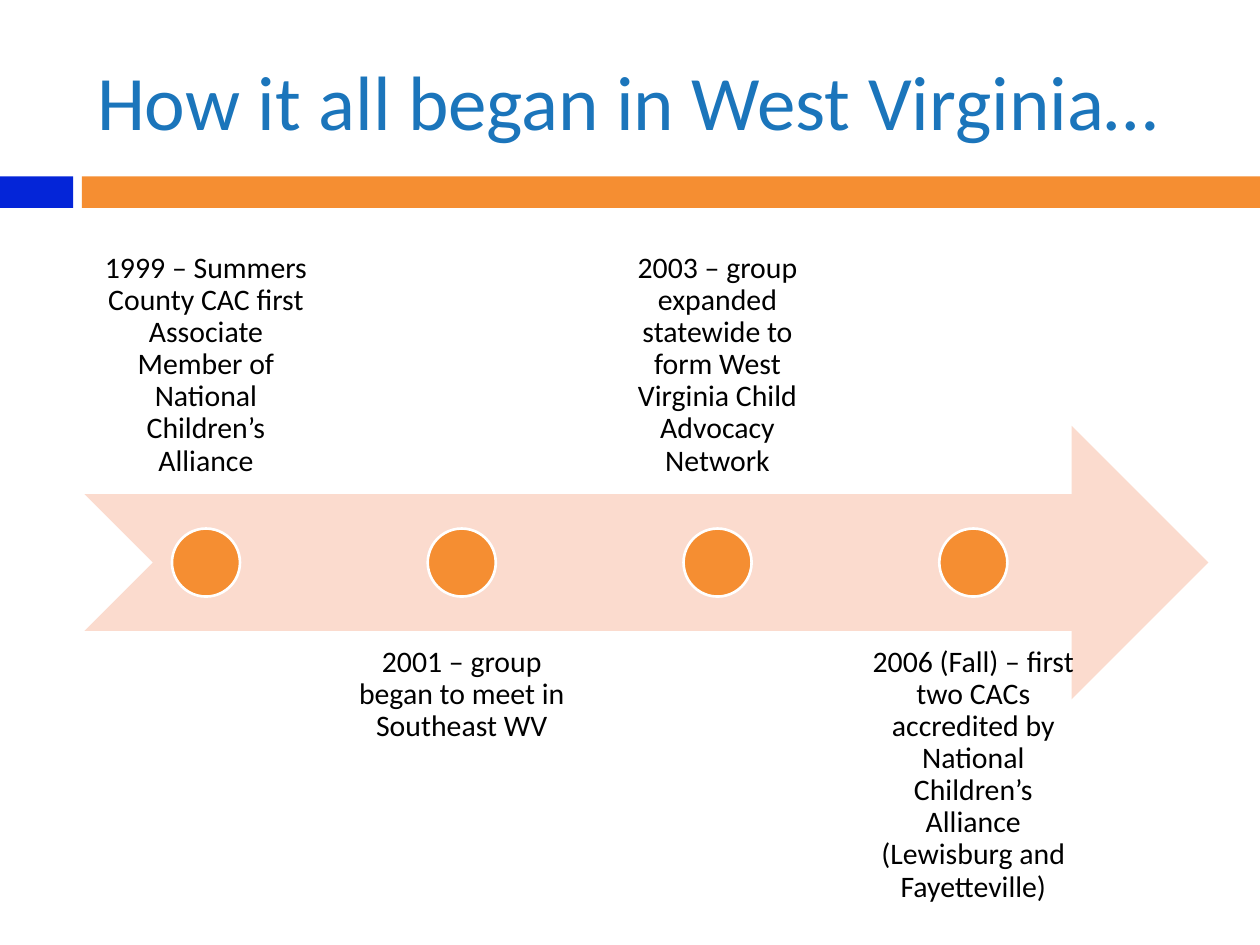
from pptx import Presentation
from pptx.dml.color import RGBColor
from pptx.enum.shapes import MSO_SHAPE
from pptx.enum.text import MSO_ANCHOR, PP_ALIGN
from pptx.util import Inches, Pt

TITLE = "How it all began in West Virginia…"
MILESTONES = [
    "1999 – Summers County CAC first Associate Member of National Children’s Alliance",
    "2001 – group began to meet in Southeast WV",
    "2003 – group expanded statewide to form West Virginia Child Advocacy Network",
    "2006 (Fall) – first two CACs accredited by National Children’s Alliance "
    "(Lewisburg and Fayetteville)",
]
COLORS = {
    "title": "1B75BB",
    "blue": "0425D8",
    "orange": "F58E32",
    "arrow": "FBDBCE",
    "text": "000000",
    "white": "FFFFFF",
}
FONT = "Calibri"
LEFT, WIDTH = 0.67, 8.92
LABEL_WIDTH, BAND_HEIGHT, STEP = 1.93, 2.17, 2.03
ARROW_TOP, LABEL_TOP, LABEL_BOTTOM = 3.38, 1.75, 5
DOT_SIZE = 0.54
INSET = 0.13


def color(name):
    return RGBColor.from_string(COLORS[name])


def add_filled(slide, kind, box, fill, outline=None):
    shape = slide.shapes.add_shape(kind, *map(Inches, box))
    shape.shadow.inherit = False
    shape.fill.solid()
    shape.fill.fore_color.rgb = color(fill)
    if outline:
        shape.line.color.rgb = color(outline)
        shape.line.width = Pt(1.5)
    else:
        shape.line.fill.background()


def write(paragraph, text, size, ink, alignment):
    paragraph.alignment = alignment
    run = paragraph.add_run()
    run.text = text
    run.font.name = FONT
    run.font.size = Pt(size)
    run.font.color.rgb = color(ink)


def add_title(slide):
    title = slide.shapes.title
    title.left, title.top = Inches(LEFT), Inches(0.25)
    title.width, title.height = Inches(WIDTH), Inches(1.08)
    title.text_frame.vertical_anchor = MSO_ANCHOR.MIDDLE
    write(title.text_frame.paragraphs[0], TITLE, 44, "title", PP_ALIGN.LEFT)


def add_milestone(slide, index, text):
    above = index % 2 == 0
    left = LEFT + index * STEP
    top = LABEL_TOP if above else LABEL_BOTTOM
    label = slide.shapes.add_textbox(
        Inches(left), Inches(top), Inches(LABEL_WIDTH), Inches(BAND_HEIGHT)
    )
    frame = label.text_frame
    frame.word_wrap = True
    frame.vertical_anchor = MSO_ANCHOR.BOTTOM if above else MSO_ANCHOR.TOP
    frame.margin_left = frame.margin_right = Inches(INSET)
    frame.margin_top = frame.margin_bottom = Inches(INSET)
    paragraph = frame.paragraphs[0]
    paragraph.line_spacing = 0.9
    write(paragraph, text, 17, "text", PP_ALIGN.CENTER)

    dot_left = left + (LABEL_WIDTH - DOT_SIZE) / 2
    dot_top = ARROW_TOP + (BAND_HEIGHT - DOT_SIZE) / 2
    dot_box = (dot_left, dot_top, DOT_SIZE, DOT_SIZE)
    add_filled(slide, MSO_SHAPE.OVAL, dot_box, "orange", "white")


def main():
    presentation = Presentation()
    presentation.slide_width, presentation.slide_height = Inches(10), Inches(7.5)
    slide = presentation.slides.add_slide(presentation.slide_layouts[5])
    add_filled(slide, MSO_SHAPE.RECTANGLE, (0, 1.4, 0.58, 0.25), "blue")
    add_filled(slide, MSO_SHAPE.RECTANGLE, (0.65, 1.4, 9.35, 0.25), "orange")
    add_title(slide)
    arrow_box = (LEFT, ARROW_TOP, WIDTH, BAND_HEIGHT)
    add_filled(slide, MSO_SHAPE.NOTCHED_RIGHT_ARROW, arrow_box, "arrow")
    for index, text in enumerate(MILESTONES):
        add_milestone(slide, index, text)
    presentation.save("out.pptx")


if __name__ == "__main__":
    main()
